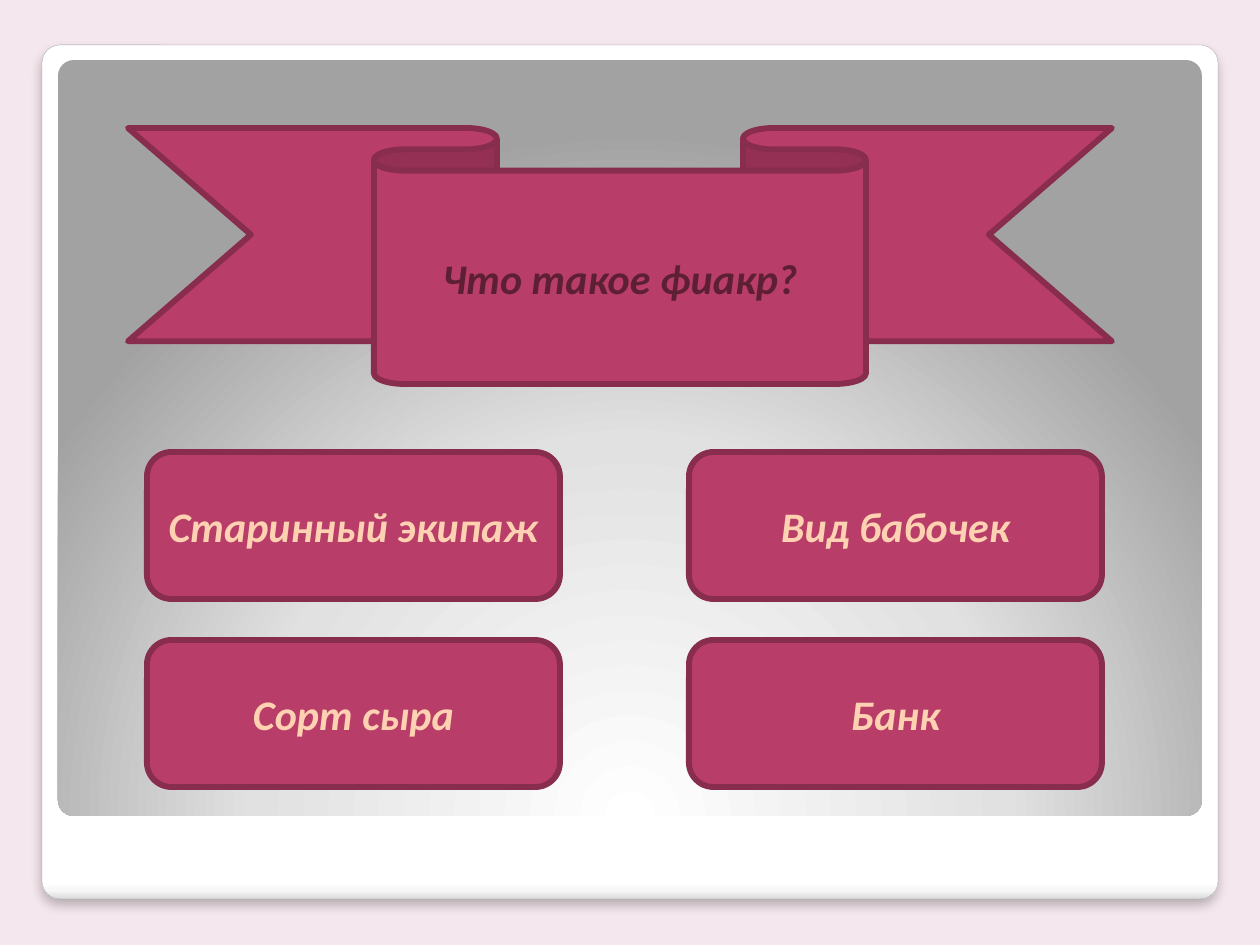
from dataclasses import dataclass

from lxml import etree
from pptx import Presentation
from pptx import util as u
from pptx.dml.color import RGBColor
from pptx.enum import shapes, text
from pptx.oxml import ns

PX = u.Inches(1) / 126

BACKGROUND = RGBColor(0xF4, 0xE7, 0xED)
CARD_EDGE = RGBColor(0xA4, 0xA4, 0xA4)
BERRY = RGBColor(0xB8, 0x3D, 0x68)
DARK_BERRY = RGBColor(0x88, 0x2D, 0x4D)
QUESTION_COLOR = RGBColor(0x5C, 0x1F, 0x34)
ANSWER_COLOR = RGBColor(0xFD, 0xD1, 0xB1)

ROUNDED = shapes.MSO_SHAPE.ROUNDED_RECTANGLE
RIBBON = shapes.MSO_SHAPE.DOWN_RIBBON
FONT = {"name": "Calibri", "size": u.Pt(24), "bold": True, "italic": True}


@dataclass(frozen=True)
class Box:
    left: int
    top: int
    width: int
    height: int


CARD = Box(42, 45, 1176, 854)
PANEL = Box(58, 60, 1144, 756)
QUESTION = Box(128, 128, 984, 256)
FIRST_ANSWER = Box(147, 452, 413, 147)
COLUMN_STEP, ROW_STEP = 542, 188

ANSWERS = [
    ["Старинный экипаж", "Вид бабочек"],
    ["Сорт сыра", "Банк"],
]

CARD_STOPS = {0: "FFFFFF", 98: "FFFFFF", 99: "F7F7F7", 100: "DADADA"}
PANEL_STOPS = {0: "FFFFFF", 55: "E1E1E1", 100: "A2A2A2"}


def add_node(parent, tag: str, **attributes):
    names = {key: str(value) for key, value in attributes.items()}
    return etree.SubElement(parent, ns.qn(tag), names)


def add_box(slide, kind, box: Box):
    lengths = (box.left, box.top, box.width, box.height)
    shape = slide.shapes.add_shape(kind, *(round(n * PX) for n in lengths))
    shape.shadow.inherit = False
    return shape


def add_gradient_box(slide, box: Box, stops: dict[int, str]):
    """Draw a slightly rounded box; return it and its gradient element."""
    shape = add_box(slide, ROUNDED, box)
    shape.adjustments[0] = 0.021
    shape.fill.background()
    properties = shape._element.spPr
    gradient = etree.Element(ns.qn("a:gradFill"), rotWithShape="1")
    stop_list = add_node(gradient, "a:gsLst")
    for position, color in stops.items():
        stop = add_node(stop_list, "a:gs", pos=position * 1000)
        add_node(stop, "a:srgbClr", val=color)
    properties.replace(properties.find(ns.qn("a:noFill")), gradient)
    return shape, gradient


def add_card(slide) -> None:
    card, gradient = add_gradient_box(slide, CARD, CARD_STOPS)
    add_node(gradient, "a:lin", ang=90 * 60000, scaled=0)
    card.line.color.rgb = CARD_EDGE
    card.line.width = u.Pt(0.16)
    effects = card._element.spPr.find(ns.qn("a:effectLst"))
    shadow = add_node(effects, "a:outerShdw", blurRad=u.Pt(6), dist=u.Pt(4),
                      dir=90 * 60000, algn="ctr", rotWithShape=0)
    color = add_node(shadow, "a:srgbClr", val="000000")
    add_node(color, "a:alpha", val=25000)


def add_panel(slide) -> None:
    panel, gradient = add_gradient_box(slide, PANEL, PANEL_STOPS)
    path = add_node(gradient, "a:path", path="circle")
    add_node(path, "a:fillToRect", l=50000, t=175000, r=50000, b=-75000)
    panel.line.fill.background()


def add_label(slide, kind, box: Box, words: str, color: RGBColor) -> None:
    shape = add_box(slide, kind, box)
    shape.fill.solid()
    shape.fill.fore_color.rgb = BERRY
    shape.line.color.rgb = DARK_BERRY
    shape.line.width = u.Pt(3.35)
    frame = shape.text_frame
    frame.word_wrap = True
    frame.vertical_anchor = text.MSO_ANCHOR.MIDDLE
    paragraph = frame.paragraphs[0]
    paragraph.alignment = text.PP_ALIGN.CENTER
    run = paragraph.add_run()
    run.text = words
    for name, value in FONT.items():
        setattr(run.font, name, value)
    run.font.color.rgb = color


def main() -> None:
    presentation = Presentation()
    presentation.slide_width = u.Inches(10)
    presentation.slide_height = u.Inches(7.5)
    slide = presentation.slides.add_slide(presentation.slide_layouts[6])
    slide.background.fill.solid()
    slide.background.fill.fore_color.rgb = BACKGROUND

    add_card(slide)
    add_panel(slide)
    add_label(slide, RIBBON, QUESTION, "Что такое фиакр?", QUESTION_COLOR)
    for row, answers in enumerate(ANSWERS):
        for column, answer in enumerate(answers):
            box = Box(FIRST_ANSWER.left + column * COLUMN_STEP,
                      FIRST_ANSWER.top + row * ROW_STEP,
                      FIRST_ANSWER.width, FIRST_ANSWER.height)
            add_label(slide, ROUNDED, box, answer, ANSWER_COLOR)

    presentation.save("out.pptx")


if __name__ == "__main__":
    main()
